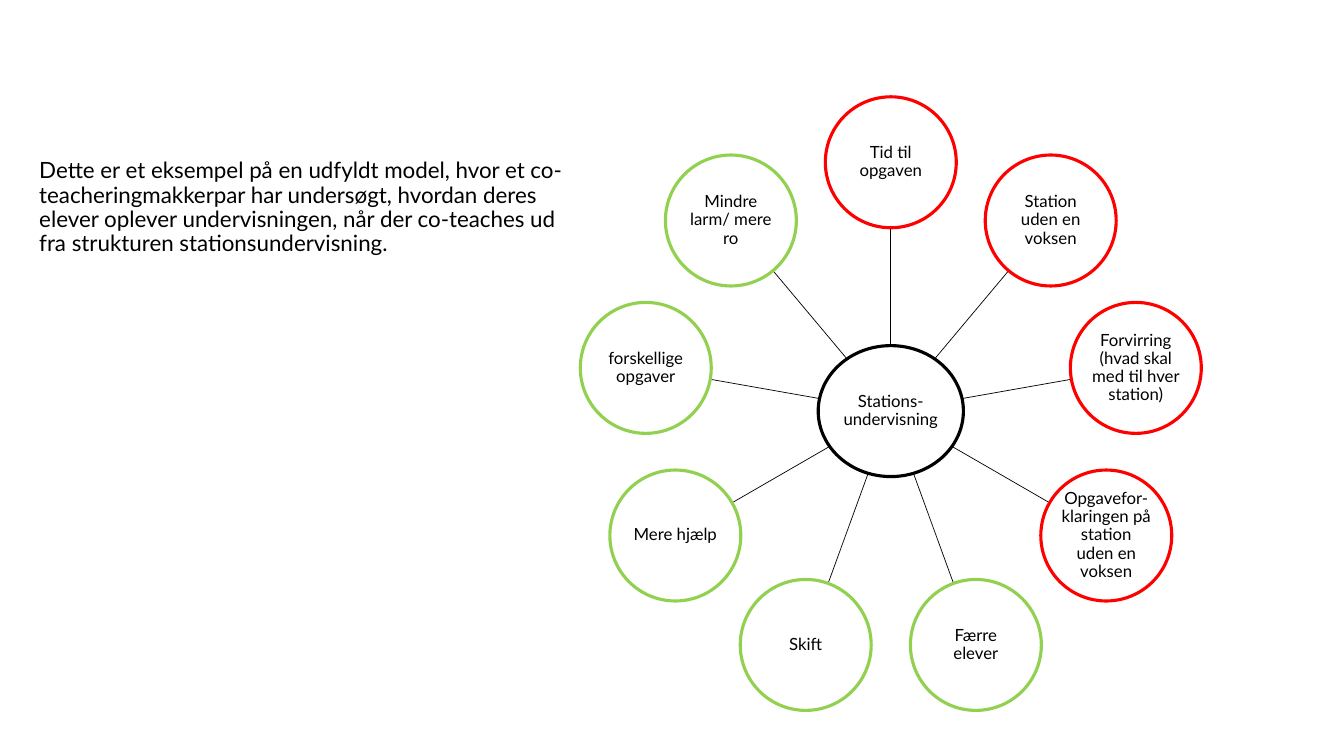
import math

import pptx
import pptx.dml.color
import pptx.enum.shapes
import pptx.enum.text
import pptx.oxml.ns
import pptx.util
from lxml import etree

Cm = pptx.util.Cm
Pt = pptx.util.Pt
RGBColor = pptx.dml.color.RGBColor

BLACK = RGBColor(0x00, 0x00, 0x00)
WHITE = RGBColor(0xFF, 0xFF, 0xFF)
RED = RGBColor(0xFF, 0x00, 0x00)
GREEN = RGBColor(0x92, 0xD0, 0x50)
FONT = "Lato"

# Geometry of the wheel, in centimetres
CENTER_X, CENTER_Y = 22.45, 10.36
ORBIT = 6.27
NODE_SIZE = 3.3
HUB_WIDTH = 3.66

INTRO = (
    "Dette er et eksempel på en udfyldt model, hvor et co-teacheringmakkerpar "
    "har undersøgt, hvordan deres elever oplever undervisningen, når der "
    "co-teaches ud fra strukturen stationsundervisning."
)
HUB_LABEL = "Stations-undervisning"
# Clockwise from the top; \v is a line break
NODES = [
    ("Tid til opgaven", RED),
    ("Station uden en voksen", RED),
    ("Forvirring (hvad skal med til hver station)", RED),
    ("Opgavefor-klaringen på station uden en voksen", RED),
    ("Færre\velever", GREEN),
    ("Skift", GREEN),
    ("Mere hjælp", GREEN),
    ("forskellige opgaver", GREEN),
    ("Mindre larm/ mere ro", GREEN),
]


def write_text(shape, text, size, alignment):
    frame = shape.text_frame
    frame.word_wrap = True
    frame.vertical_anchor = pptx.enum.text.MSO_ANCHOR.MIDDLE
    frame.text = text
    para = frame.paragraphs[0]
    para.alignment = alignment
    para.line_spacing = 0.9
    para.font.name = FONT
    para.font.size = Pt(size)
    para.font.color.rgb = BLACK


def add_intro(slide):
    box = slide.shapes.add_textbox(Cm(0.74), Cm(1.52), Cm(13.82), Cm(7.44))
    write_text(box, INTRO, 16, pptx.enum.text.PP_ALIGN.LEFT)


def add_bubble(slide, x, y, width, text, color):
    """Draw a labelled ellipse centred on (x, y)."""
    bubble = slide.shapes.add_shape(
        pptx.enum.shapes.MSO_SHAPE.OVAL,
        Cm(x - width / 2), Cm(y - NODE_SIZE / 2), Cm(width), Cm(NODE_SIZE),
    )
    bubble.shadow.inherit = False
    bubble.fill.solid()
    bubble.fill.fore_color.rgb = WHITE
    bubble.line.color.rgb = color
    bubble.line.width = Pt(2.25)
    frame = bubble.text_frame
    frame.margin_left = frame.margin_right = Cm(0.03)
    frame.margin_top = frame.margin_bottom = Cm(0.03)
    write_text(bubble, text, 12, pptx.enum.text.PP_ALIGN.CENTER)


def point_on_spoke(angle, distance):
    """Return the point at a clockwise angle from the top of the wheel."""
    return (CENTER_X + distance * math.sin(angle),
            CENTER_Y - distance * math.cos(angle))


def add_spoke(slide, angle):
    """Join the rim of the hub to the rim of the node at this angle."""
    hub_rim = 1 / math.hypot(math.sin(angle) / (HUB_WIDTH / 2),
                             math.cos(angle) / (NODE_SIZE / 2))
    start = point_on_spoke(angle, hub_rim)
    end = point_on_spoke(angle, ORBIT - NODE_SIZE / 2)
    spoke = slide.shapes.add_connector(
        pptx.enum.shapes.MSO_CONNECTOR.STRAIGHT,
        *(Cm(value) for value in start + end),
    )
    spoke.line.color.rgb = BLACK
    spoke.line.width = Pt(0.5)
    etree.SubElement(spoke._element.spPr, pptx.oxml.ns.qn("a:effectLst"))


def add_wheel(slide):
    add_bubble(slide, CENTER_X, CENTER_Y, HUB_WIDTH, HUB_LABEL, BLACK)
    for index, (label, color) in enumerate(NODES):
        angle = math.tau * index / len(NODES)
        add_spoke(slide, angle)
        x, y = point_on_spoke(angle, ORBIT)
        add_bubble(slide, x, y, NODE_SIZE, label, color)


def main():
    deck = pptx.Presentation()
    deck.slide_width = Cm(33.87)
    deck.slide_height = Cm(19.05)
    slide = deck.slides.add_slide(deck.slide_layouts[6])
    add_intro(slide)
    add_wheel(slide)
    deck.save("out.pptx")


if __name__ == "__main__":
    main()
